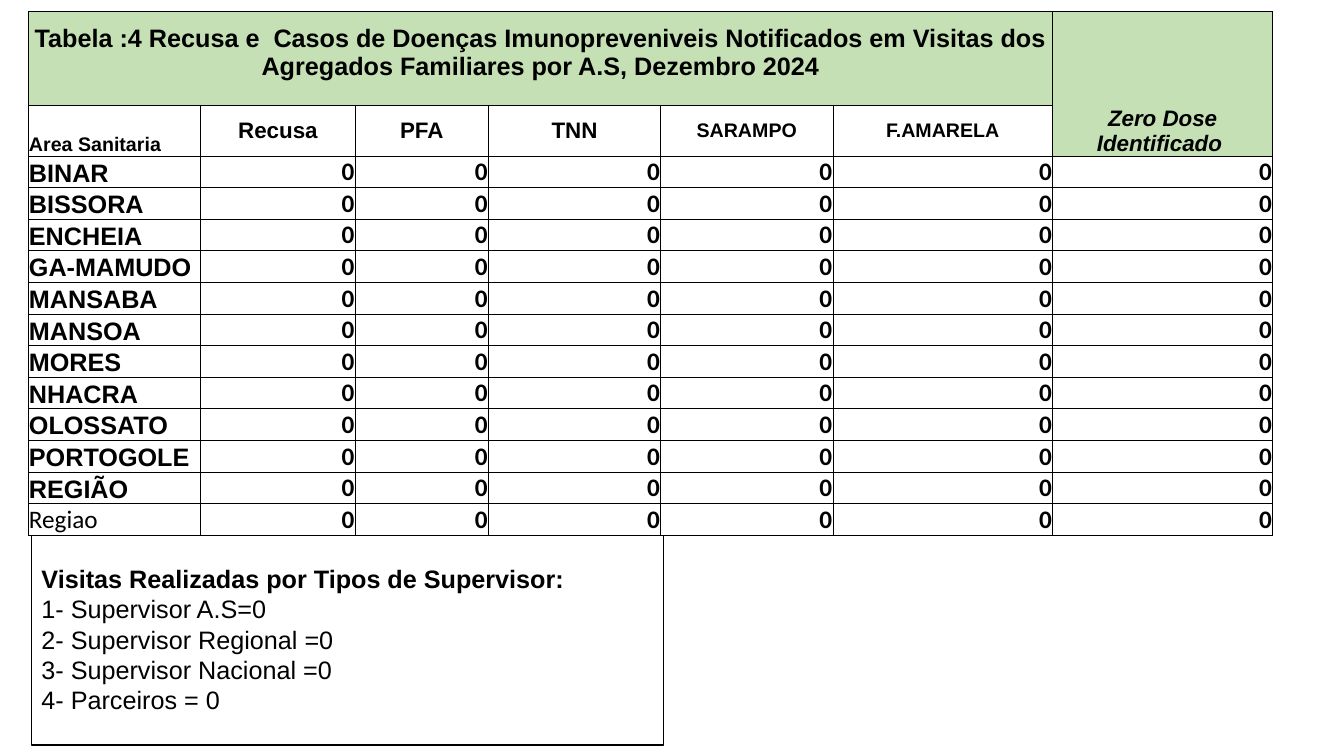
import pptx
import pptx.util
import pptx.dml.color
import pptx.enum.text
import pptx.oxml
import pptx.oxml.ns

Cm, Pt = pptx.util.Cm, pptx.util.Pt
ALIGN = pptx.enum.text.PP_ALIGN
ANCHOR = pptx.enum.text.MSO_ANCHOR

TITLE = ("Tabela :4 Recusa e  Casos de Doenças Imunopreveniveis Notificados em Visitas "
         "dos Agregados Familiares por A.S, Dezembro 2024")
ZERO_DOSE = "Zero Dose Identificado "
HEADERS = ["Area Sanitaria", "Recusa", "PFA", "TNN", "SARAMPO", "F.AMARELA"]
RESULTS = {
    "BINAR": [0, 0, 0, 0, 0, 0],
    "BISSORA": [0, 0, 0, 0, 0, 0],
    "ENCHEIA": [0, 0, 0, 0, 0, 0],
    "GA-MAMUDO": [0, 0, 0, 0, 0, 0],
    "MANSABA": [0, 0, 0, 0, 0, 0],
    "MANSOA": [0, 0, 0, 0, 0, 0],
    "MORES": [0, 0, 0, 0, 0, 0],
    "NHACRA": [0, 0, 0, 0, 0, 0],
    "OLOSSATO": [0, 0, 0, 0, 0, 0],
    "PORTOGOLE": [0, 0, 0, 0, 0, 0],
    "REGIÃO": [0, 0, 0, 0, 0, 0],
    "Regiao": [0, 0, 0, 0, 0, 0],
}
SUPERVISORS = [
    "Visitas Realizadas por Tipos de Supervisor:",
    "1- Supervisor A.S=0",
    "2- Supervisor Regional =0",
    "3- Supervisor Nacional =0",
    "4- Parceiros = 0",
]

COL_WIDTHS = [4.35, 3.89, 3.36, 4.34, 4.34, 5.54, 5.54]
ROW_HEIGHTS = [2.37, 1.28] + [0.79] * len(RESULTS)
TABLE_LEFT, TABLE_TOP = 0.71, 0.28
BOX = {"left": Cm(0.79), "top": Cm(13.44), "width": Cm(15.93), "height": Cm(5.33)}


class Theme:
    green = pptx.dml.color.RGBColor.from_string("C5E0B4")
    white = pptx.dml.color.RGBColor.from_string("FFFFFF")
    black = pptx.dml.color.RGBColor.from_string("000000")
    heading, number = "Arial", "Calibri"
    large, medium, small = Pt(18), Pt(16), Pt(14)
    border, outline = Pt(0.5), Pt(1)


def apply(target, formats):
    for name, value in formats.items():
        setattr(target, name, value)


def write(p, text, align=ALIGN.LEFT, **font):
    p.alignment = align
    r = p.add_run()
    r.text = text
    apply(r.font, {"name": Theme.heading, "size": Theme.large, "bold": True,
                   "italic": False, **font})
    r.font.color.rgb = Theme.black


def style_cell(cell, fill):
    tc_pr = cell._tc.get_or_add_tcPr()
    for side in ("lnL", "lnR", "lnT", "lnB"):
        tc_pr.append(pptx.oxml.parse_xml(
            f'<a:{side} {pptx.oxml.ns.nsdecls("a")} w="{Theme.border}">'
            f'<a:solidFill><a:srgbClr val="{Theme.black}"/></a:solidFill></a:{side}>'))
    cell.fill.solid()
    cell.fill.fore_color.rgb = fill
    apply(cell, {"margin_left": Cm(0.02), "margin_right": Cm(0.02), "margin_top": Cm(0.02),
                 "margin_bottom": 0, "vertical_anchor": ANCHOR.BOTTOM})


def fill_cell(cell, text, **formats):
    write(cell.text_frame.paragraphs[0], text, **formats)


def add_results_table(s):
    frame = s.shapes.add_table(len(ROW_HEIGHTS), len(COL_WIDTHS), Cm(TABLE_LEFT), Cm(TABLE_TOP),
                               Cm(sum(COL_WIDTHS)), Cm(sum(ROW_HEIGHTS)))
    table = frame.table
    apply(table, {"first_row": False, "horz_banding": False})
    for column, width in zip(table.columns, COL_WIDTHS):
        column.width = Cm(width)
    for row, height in zip(table.rows, ROW_HEIGHTS):
        row.height = Cm(height)

    last = len(COL_WIDTHS) - 1
    for r in range(len(ROW_HEIGHTS)):
        for c in range(len(COL_WIDTHS)):
            green = r == 0 or (r == 1 and c == last)
            style_cell(table.cell(r, c), Theme.green if green else Theme.white)
    table.cell(0, 0).merge(table.cell(0, last - 1))
    table.cell(0, last).merge(table.cell(1, last))

    fill_cell(table.cell(0, 0), TITLE, align=ALIGN.CENTER)
    table.cell(0, 0).margin_bottom = Cm(0.6)
    fill_cell(table.cell(0, last), ZERO_DOSE, align=ALIGN.CENTER, size=Theme.medium, italic=True)

    for c, header in enumerate(HEADERS):
        cell = table.cell(1, c)
        size = Theme.medium if header in ("Recusa", "PFA", "TNN") else Theme.small
        fill_cell(cell, header, align=ALIGN.CENTER if c else ALIGN.LEFT, size=size)
        if c:
            cell.vertical_anchor = ANCHOR.MIDDLE

    for r, (area, values) in enumerate(RESULTS.items(), start=2):
        is_area = area.isupper()
        fill_cell(table.cell(r, 0), area, bold=is_area,
                  name=Theme.heading if is_area else Theme.number)
        for c, value in enumerate(values, start=1):
            fill_cell(table.cell(r, c), str(value), align=ALIGN.RIGHT, name=Theme.number)


def fill_supervisor_box(box):
    apply(box, BOX)
    box.fill.solid()
    box.fill.fore_color.rgb = Theme.white
    box.line.color.rgb = Theme.black
    box.line.width = Theme.outline
    tf = box.text_frame
    apply(tf, {"word_wrap": True, "vertical_anchor": ANCHOR.MIDDLE,
               "auto_size": pptx.enum.text.MSO_AUTO_SIZE.NONE})
    for i, line in enumerate(SUPERVISORS):
        p = tf.add_paragraph() if i else tf.paragraphs[0]
        write(p, line, bold=i == 0)
        p.space_before = Pt(0)
        p_pr = p._p.get_or_add_pPr()
        p_pr.set("marL", "0")
        p_pr.set("indent", "0")
        p_pr.append(pptx.oxml.parse_xml(f'<a:buNone {pptx.oxml.ns.nsdecls("a")}/>'))


def main():
    prs = pptx.Presentation()
    apply(prs, {"slide_width": Cm(33.87), "slide_height": Cm(19.05)})
    s = prs.slides.add_slide(prs.slide_layouts[1])
    title = s.shapes.title
    title.element.getparent().remove(title.element)
    add_results_table(s)
    fill_supervisor_box(s.placeholders[1])
    prs.save("out.pptx")


if __name__ == "__main__":
    main()
